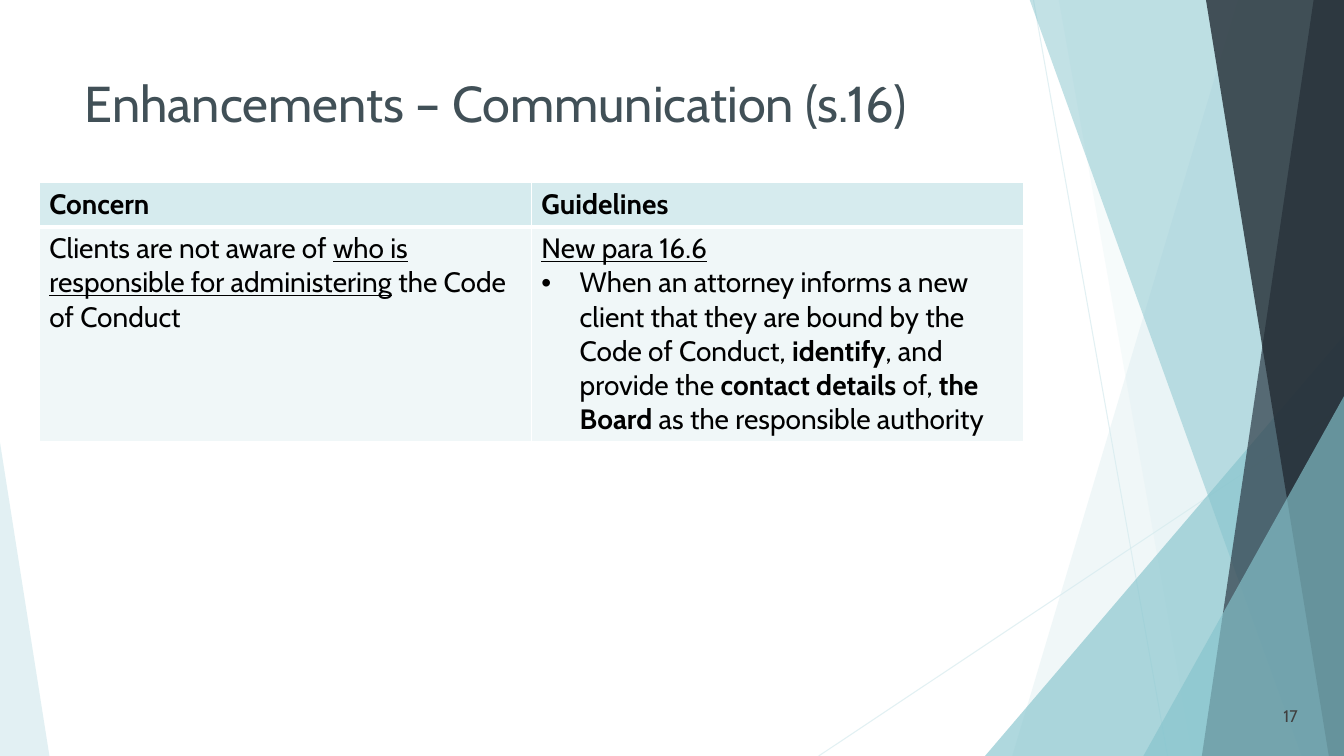
import pptx
import pptx.util
import pptx.dml.color
import pptx.enum.shapes
import pptx.enum.text
import pptx.oxml
import pptx.oxml.ns
from lxml import etree

RGB = pptx.dml.color.RGBColor
PALE = RGB(0xD6, 0xEB, 0xEE)
TEAL = RGB(0x86, 0xC4, 0xCD)
SLATE = RGB(0x2E, 0x3B, 0x46)
NAVY = RGB(0x23, 0x2C, 0x34)
HEADING = RGB(0x41, 0x50, 0x57)
GREY = RGB(0x40, 0x40, 0x40)
BLACK = RGB(0, 0, 0)
WHITE = RGB(0xFF, 0xFF, 0xFF)
BODY_FILL = RGB(0xF0, 0xF7, 0xF8)

EMU_PER_PX = 9144  # 100 px to the inch
W, H = 1333, 750
TOP = -1
BOLD, UNDERLINE = "bold", "underline"


def px(n):
    return pptx.util.Emu(n * EMU_PER_PX)


def sub(parent, tag, **attrs):
    """Append a DrawingML child element."""
    return etree.SubElement(parent, pptx.oxml.ns.qn(tag), attrs)


def set_opacity(s, percent):
    colour = s.element.spPr.find(".//" + pptx.oxml.ns.qn("a:srgbClr"))
    sub(colour, "a:alpha", val=str(percent * 1000))


class Deck:
    font = "Cabin"

    def __init__(self):
        self.prs = pptx.Presentation()
        self.prs.slide_width, self.prs.slide_height = px(W), px(H)
        self.slide = self.prs.slides.add_slide(self.prs.slide_layouts[5])

    def run(self, p, text, size, color, style=None):
        r = p.add_run()
        r.text = text
        r.font.name, r.font.size = self.font, pptx.util.Pt(size)
        r.font.color.rgb = color
        r.font.bold = style == BOLD
        r.font.underline = style == UNDERLINE

    def line(self, x1, y1, x2, y2, color, opacity):
        s = self.slide.shapes.add_connector(
            pptx.enum.shapes.MSO_CONNECTOR.STRAIGHT, px(x1), px(y1), px(x2), px(y2))
        s.line.color.rgb, s.line.width = color, pptx.util.Pt(0.75)
        set_opacity(s, opacity)
        sub(s.element.spPr, "a:effectLst")

    def paint(self, s, color, opacity):
        s.shadow.inherit = False
        s.fill.solid()
        s.fill.fore_color.rgb = color
        set_opacity(s, opacity)
        s.line.fill.background()

    def band(self, top_x, bottom_x, color, opacity):
        """Full-height band from a slanted left edge to the right slide edge."""
        fb = self.slide.shapes.build_freeform(top_x, TOP, EMU_PER_PX)
        fb.add_line_segments([(W, TOP), (W, H), (bottom_x, H)])
        self.paint(fb.convert_to_shape(), color, opacity)

    def triangle(self, x, y, w, apex, color, opacity):
        """Triangle standing on the bottom slide edge."""
        s = self.slide.shapes.add_shape(
            pptx.enum.shapes.MSO_SHAPE.ISOSCELES_TRIANGLE, px(x), px(y), px(w), px(H - y))
        s.adjustments[0] = apex
        self.paint(s, color, opacity)

    def title(self, x, y, w, h, text):
        s = self.slide.shapes.title
        s.left, s.top, s.width, s.height = px(x), px(y), px(w), px(h)
        tf = s.text_frame
        tf.word_wrap = True
        tf.auto_size = pptx.enum.text.MSO_AUTO_SIZE.NONE
        tf.vertical_anchor = pptx.enum.text.MSO_ANCHOR.TOP
        p = tf.paragraphs[0]
        p.alignment = pptx.enum.text.PP_ALIGN.LEFT
        self.run(p, text, 36, HEADING)

    def page_number(self, x, y, w, h, text):
        tf = self.slide.shapes.add_textbox(px(x), px(y), px(w), px(h)).text_frame
        tf.word_wrap = True
        tf.vertical_anchor = pptx.enum.text.MSO_ANCHOR.MIDDLE
        p = tf.paragraphs[0]
        p.alignment = pptx.enum.text.PP_ALIGN.RIGHT
        self.run(p, text, 12, GREY)

    def borders(self, cell, top, bottom):
        tcPr = cell._tc.get_or_add_tcPr()
        for side, width in zip("LRTB", (1, 1, top, bottom)):
            ln = sub(tcPr, "a:ln" + side, w=str(pptx.util.Pt(width)))
            sub(sub(ln, "a:solidFill"), "a:srgbClr", val=str(WHITE))

    def bullet(self, p, indent):
        pPr = p._p.get_or_add_pPr()
        pPr.set("marL", str(px(indent)))
        pPr.set("indent", str(px(-indent)))
        sub(pPr, "a:buFont", typeface="Arial")
        sub(pPr, "a:buChar", char="•")

    def table(self, x, y, col_width, heights, rows):
        """Each cell is a list of paragraphs: (bulleted, runs)."""
        cols = len(rows[0])
        t = self.slide.shapes.add_table(
            len(rows), cols, px(x), px(y), px(col_width * cols), px(sum(heights))).table
        t.horz_banding = False
        for col in t.columns:
            col.width = px(col_width)
        for i, (height, row) in enumerate(zip(heights, rows)):
            t.rows[i].height = px(height)
            for j, paragraphs in enumerate(row):
                cell = t.cell(i, j)
                self.borders(cell, 3 if i else 1, 1 if i else 3)
                cell.fill.solid()
                cell.fill.fore_color.rgb = BODY_FILL if i else PALE
                tf = cell.text_frame
                for k, (bulleted, runs) in enumerate(paragraphs):
                    p = tf.add_paragraph() if k else tf.paragraphs[0]
                    if bulleted:
                        self.bullet(p, 38)
                    for text, style in runs:
                        self.run(p, text, 20, BLACK, style)


def main():
    d = Deck()
    d.line(1025, 0, 1158, H, PALE, 70)
    d.line(W, 403, 812, H, PALE, 70)
    d.band(1228, 1004, PALE, 36)
    d.band(1050, 1183, PALE, 20)
    d.triangle(977, 333, 356, 1, TEAL, 66)
    d.band(1021, 1291, TEAL, 50)
    d.band(1303, 1192, SLATE, 70)
    d.band(1196, 1318, NAVY, 80)
    d.triangle(1134, 393, 199, 1, TEAL, 66)
    d.triangle(0, 439, 49, 0, PALE, 70)

    d.title(74, 67, 940, 99, "Enhancements – Communication (s.16)")
    header = [[(False, [(text, BOLD)])] for text in ("Concern", "Guidelines")]
    concern = [(False, [("Clients are not aware of ", None),
                        ("who is responsible for administering", UNDERLINE),
                        (" the Code of Conduct", None)])]
    guideline = [
        (False, [("New para 16.6", UNDERLINE)]),
        (True, [("When an attorney informs a new client that they are bound by "
                 "the Code of Conduct, ", None),
                ("identify", BOLD), (", and provide the ", None),
                ("contact details ", BOLD), ("of, ", None),
                ("the Board ", BOLD), ("as the responsible authority", None)]),
    ]
    d.table(39, 181, 488, [43, 213], [header, [concern, guideline]])
    d.page_number(1222, 690, 75, 40, "17")
    d.prs.save("out.pptx")


if __name__ == "__main__":
    main()
